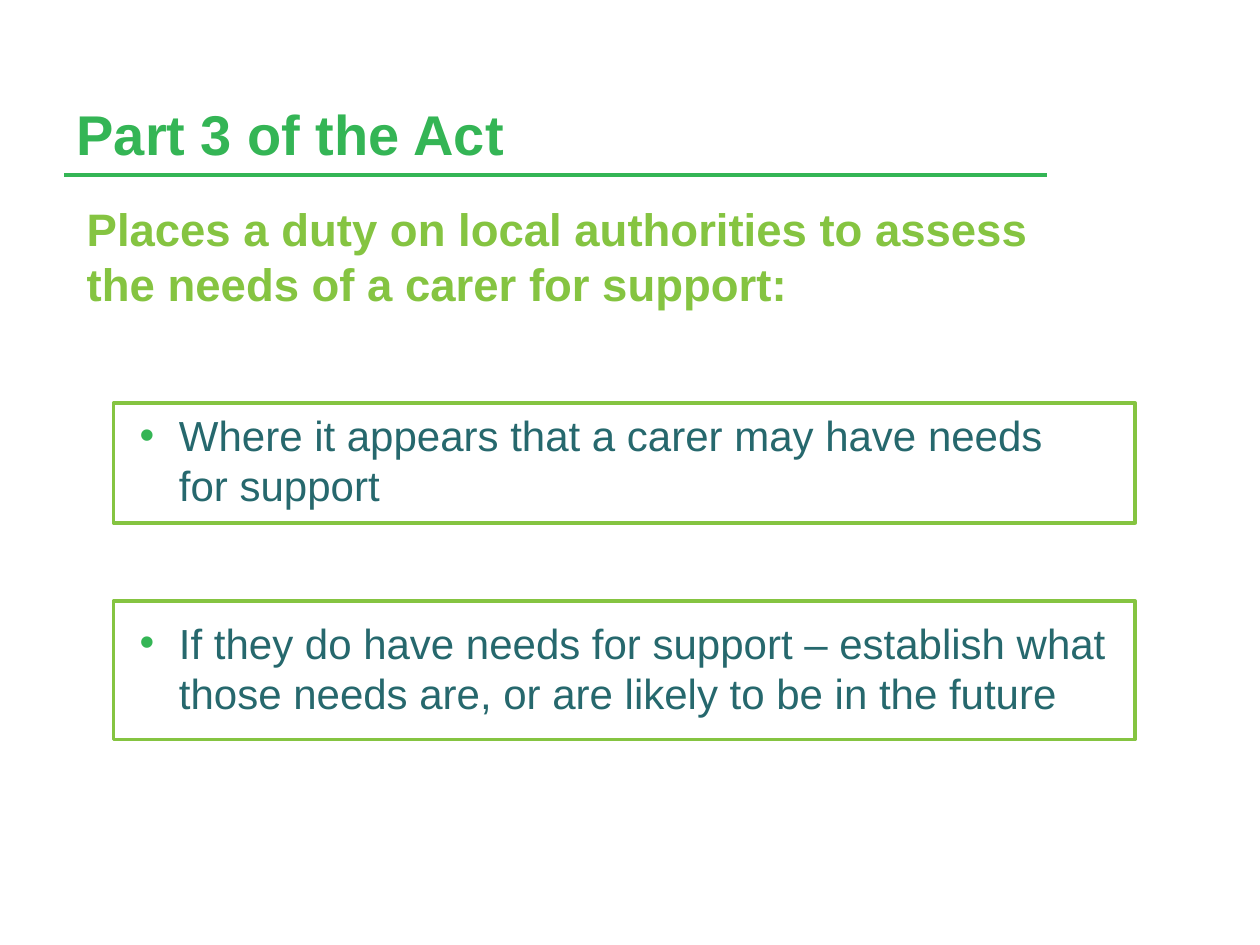
"""Build the slide on Part 3 of the Act and the duty to assess carers."""
import dataclasses

import lxml.etree
import pptx
import pptx.dml.color
import pptx.enum.shapes
import pptx.enum.text
import pptx.oxml.ns
import pptx.util

Pt = pptx.util.Pt
RGB = pptx.dml.color.RGBColor
qn = pptx.oxml.ns.qn


@dataclasses.dataclass(frozen=True)
class Theme:
    font: str = "Arial"
    green: str = "34B555"
    lime: str = "85C441"
    teal: str = "26686D"
    title_size: int = 32
    lead_size: int = 26
    bullet_size: int = 24
    line_width: int = 2


theme = Theme()


def add_text(slide, text, *, box, size, color, bold=False, bullet=None,
             anchor=pptx.enum.text.MSO_ANCHOR.TOP):
    frame = slide.shapes.add_textbox(*map(Pt, box)).text_frame
    frame.word_wrap = True
    frame.vertical_anchor = anchor
    paragraph = frame.paragraphs[0]
    paragraph.text = text
    if bullet:
        properties = paragraph._p.get_or_add_pPr()
        properties.set("marL", str(Pt(58.5)))
        properties.set("indent", str(Pt(-22.5)))
        bullet_color = lxml.etree.SubElement(properties, qn("a:buClr"))
        lxml.etree.SubElement(bullet_color, qn("a:srgbClr"), val=bullet)
        lxml.etree.SubElement(properties, qn("a:buFont"), typeface=theme.font)
        lxml.etree.SubElement(properties, qn("a:buChar"), char="•")
    for run in paragraph.runs:
        run.font.name = theme.font
        run.font.size = Pt(size)
        run.font.bold = bold
        run.font.color.rgb = RGB.from_string(color)


presentation = pptx.Presentation()
presentation.slide_width, presentation.slide_height = Pt(720), Pt(540)
slide = presentation.slides.add_slide(presentation.slide_layouts[6])

rule = slide.shapes.add_connector(
    pptx.enum.shapes.MSO_CONNECTOR.STRAIGHT, Pt(36.72), Pt(100.08), Pt(598.32), Pt(100.08))
rule.line.color.rgb = RGB.from_string(theme.green)
rule.line.width = Pt(theme.line_width)
lxml.etree.SubElement(rule._element.spPr, qn("a:effectLst"))

add_text(slide, "Part 3 of the Act", box=(36.72, 20.16, 561.6, 78.48),
         size=theme.title_size, color=theme.green, bold=True,
         anchor=pptx.enum.text.MSO_ANCHOR.BOTTOM)
add_text(slide, "Places a duty on local authorities to assess the needs of a carer for support:",
         box=(42.48, 111.6, 578.16, 70.56),
         size=theme.lead_size, color=theme.lime, bold=True)

duties = [
    ("Where it appears that a carer may have needs \vfor support",
     (230.4, 79.2), (230.4, 68.4)),
    ("If they do have needs for support – establish what those needs are, "
     "or are likely to be in the future",
     (349.2, 98.64), (343.44, 79.2)),
]
for text, (text_top, text_height), (frame_top, frame_height) in duties:
    add_text(slide, text, box=(36.72, text_top, 648, text_height),
             size=theme.bullet_size, color=theme.teal, bullet=theme.green)
    outline = slide.shapes.add_shape(
        pptx.enum.shapes.MSO_SHAPE.RECTANGLE,
        Pt(64.8), Pt(frame_top), Pt(583.92), Pt(frame_height))
    outline.shadow.inherit = False
    outline.fill.background()
    outline.line.color.rgb = RGB.from_string(theme.lime)
    outline.line.width = Pt(theme.line_width)

presentation.save("out.pptx")
